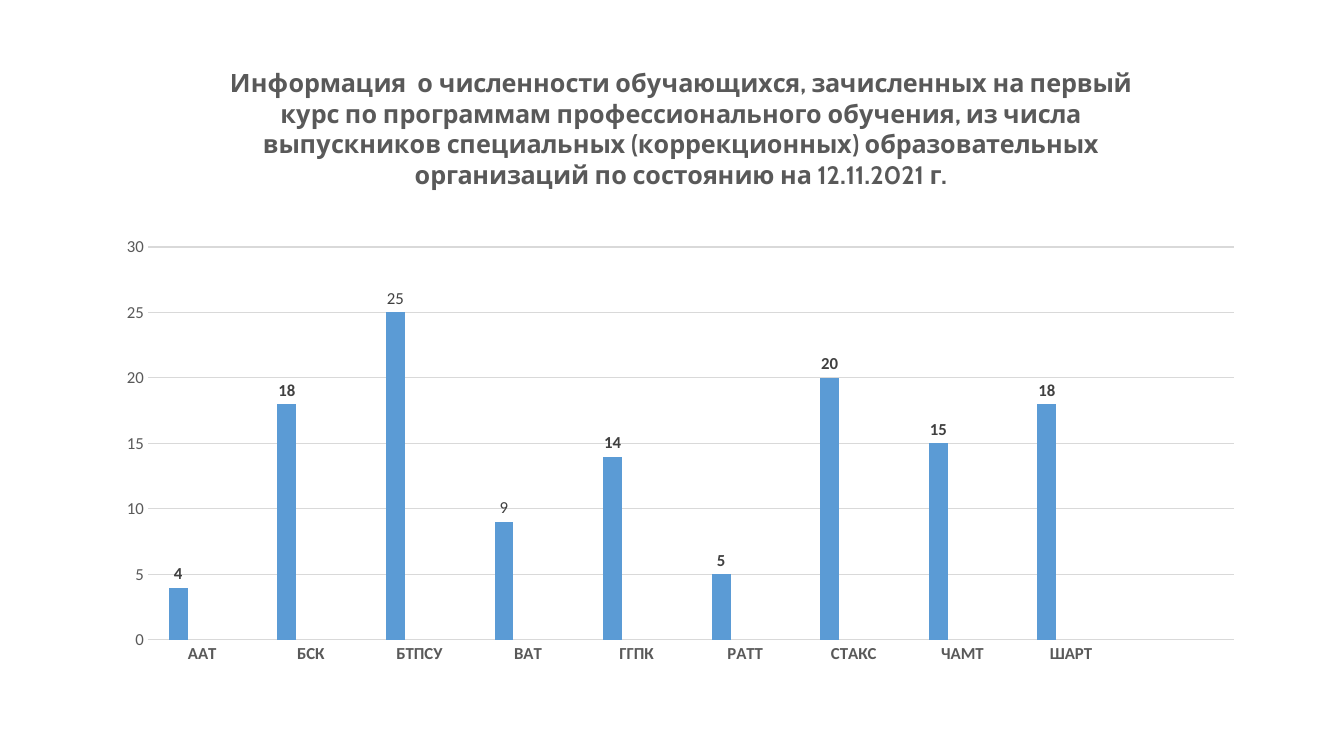
from dataclasses import dataclass
from lxml.etree import SubElement
from pptx import Presentation
from pptx.chart.data import CategoryChartData as ChartData
from pptx.dml.color import RGBColor as Rgb
from pptx.enum.chart import XL_CHART_TYPE as Kind
from pptx.enum.chart import XL_LABEL_POSITION as Spot
from pptx.enum.chart import XL_TICK_MARK as Tick
from pptx.oxml.ns import qn
from pptx.util import Pt

TITLE = (
    "Информация  о численности обучающихся, зачисленных на первый курс "
    "по программам профессионального обучения, из числа выпускников "
    "специальных (коррекционных) образовательных организаций "
    "по состоянию на 12.11.2021 г."
)
COUNTS = {
    "ААТ": 4,
    "БСК": 18,
    "БТПСУ": 25,
    "ВАТ": 9,
    "ГГПК": 14,
    "РАТТ": 5,
    "СТАКС": 20,
    "ЧАМТ": 15,
    "ШАРТ": 18,
    "": None,
}
LIGHT = ("БТПСУ", "ВАТ")

SLIDE = (1344, 756)
FRAME = (104, 43, 1154, 634)
PLOT = (148, 247, 1086, 393)


@dataclass(frozen=True)
class Theme:
    head: str = "Cabin"
    body: str = "Calibri"
    big: int = 18
    small: int = 12
    text: str = "595959"
    label: str = "404040"
    grid: str = "D9D9D9"
    bars: tuple = ("5B9BD5", "ED7D31", "A5A5A5")


LOOK = Theme()


def px(n):
    return round(n * 9144000 / 1008)


def style(font, color, bold=False, size=LOOK.small, name=LOOK.body):
    font.name, font.size, font.bold = name, Pt(size), bold
    font.color.rgb = Rgb.from_string(color)


def rule(line):
    line.width = Pt(0.75)
    line.color.rgb = Rgb.from_string(LOOK.grid)


def place_plot(chart):
    area = chart._chartSpace.find(".//" + qn("c:plotArea"))
    for old in area.findall(qn("c:layout")):
        area.remove(old)
    layout = SubElement(area, qn("c:layout"))
    area.insert(0, layout)
    manual = SubElement(layout, qn("c:manualLayout"))
    left, top, wide, high = FRAME
    x, y, w, h = PLOT
    parts = {
        "layoutTarget": "inner",
        "xMode": "edge",
        "yMode": "edge",
        "x": round((x - left) / wide, 4),
        "y": round((y - top) / high, 4),
        "w": round(w / wide, 4),
        "h": round(h / high, 4),
    }
    for tag, val in parts.items():
        SubElement(manual, qn("c:" + tag)).set("val", str(val))


def add_title(chart):
    chart.has_title = True
    chart.chart_title.include_in_layout = False
    para = chart.chart_title.text_frame.paragraphs[0]
    para.text = TITLE
    style(para.font, LOOK.text, True, LOOK.big, LOOK.head)
    style(para.runs[0].font, LOOK.text, True, LOOK.big, LOOK.head)


def style_axes(chart):
    cats, vals = chart.category_axis, chart.value_axis
    for axis in (cats, vals):
        axis.major_tick_mark = axis.minor_tick_mark = Tick.NONE
        style(axis.tick_labels.font, LOOK.text, axis is cats)
    rule(cats.format.line)
    vals.minimum_scale, vals.maximum_scale, vals.major_unit = 0, 30, 5
    vals.format.line.fill.background()
    rule(vals.major_gridlines.format.line)


def style_bars(chart):
    plot = chart.plots[0]
    plot.gap_width, plot.overlap = 219, -27
    plot.vary_by_categories = False
    for row, color in zip(plot.series, LOOK.bars):
        row.format.fill.solid()
        row.format.fill.fore_color.rgb = Rgb.from_string(color)
        row.invert_if_negative = False
    first = plot.series[0]
    labels = first.data_labels
    labels.show_value = True
    labels.position = Spot.OUTSIDE_END
    style(labels.font, LOOK.label, True)
    for n, name in enumerate(COUNTS):
        if name in LIGHT:
            label = first.points[n].data_label
            style(label.font, LOOK.label)
            label.position = Spot.OUTSIDE_END


def main():
    deck = Presentation()
    deck.slide_width, deck.slide_height = map(px, SLIDE)
    slide = deck.slides.add_slide(deck.slide_layouts[6])
    data = ChartData()
    data.categories = list(COUNTS)
    data.add_series("Series 1", list(COUNTS.values()))
    for n in (2, 3):
        data.add_series(f"Series {n}", [None] * len(COUNTS))
    kind = Kind.COLUMN_CLUSTERED
    chart = slide.shapes.add_chart(kind, *map(px, FRAME), data).chart
    chart.has_legend = False
    style(chart.font, "000000", size=10)
    add_title(chart)
    style_axes(chart)
    style_bars(chart)
    place_plot(chart)
    deck.save("out.pptx")


if __name__ == "__main__":
    main()
